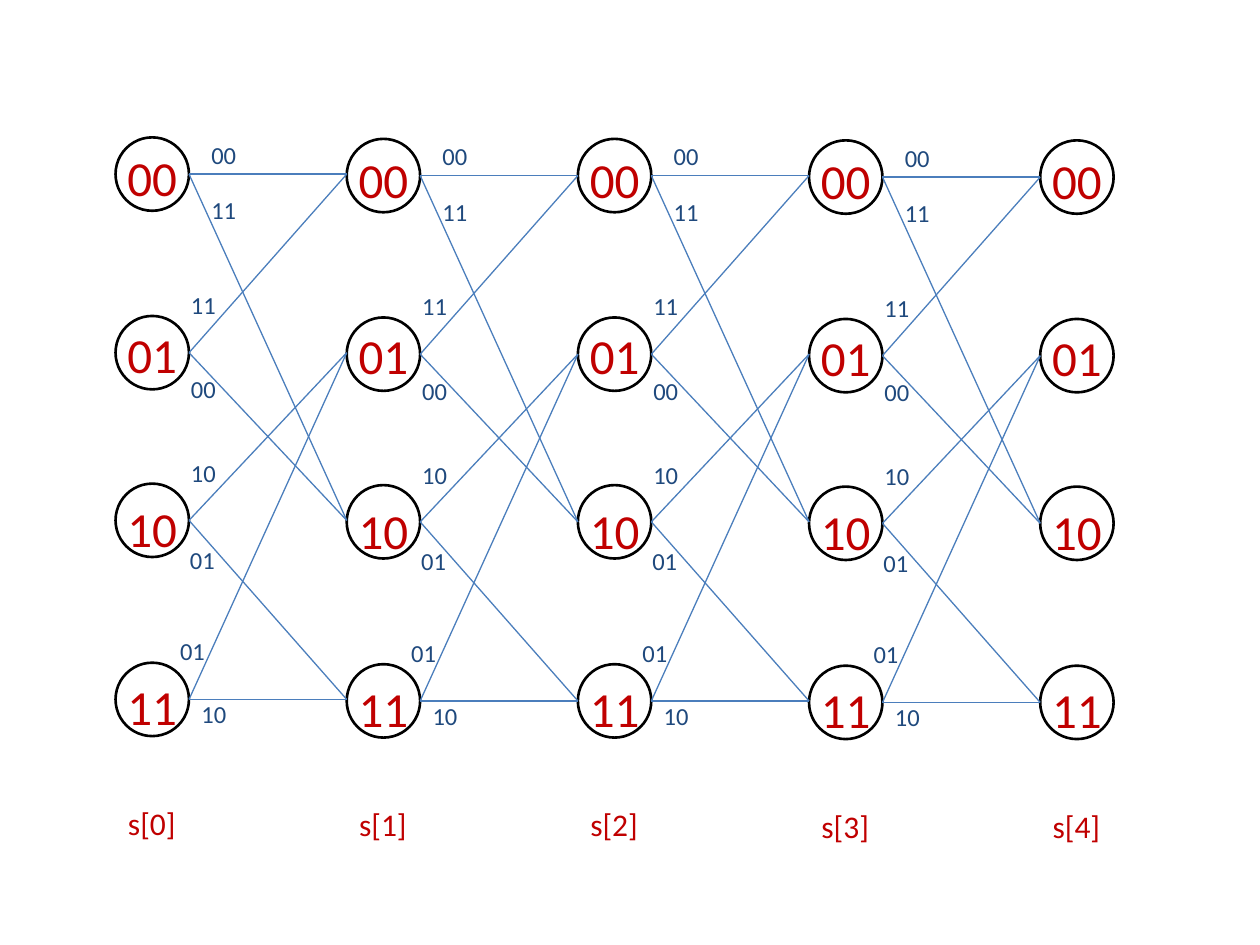
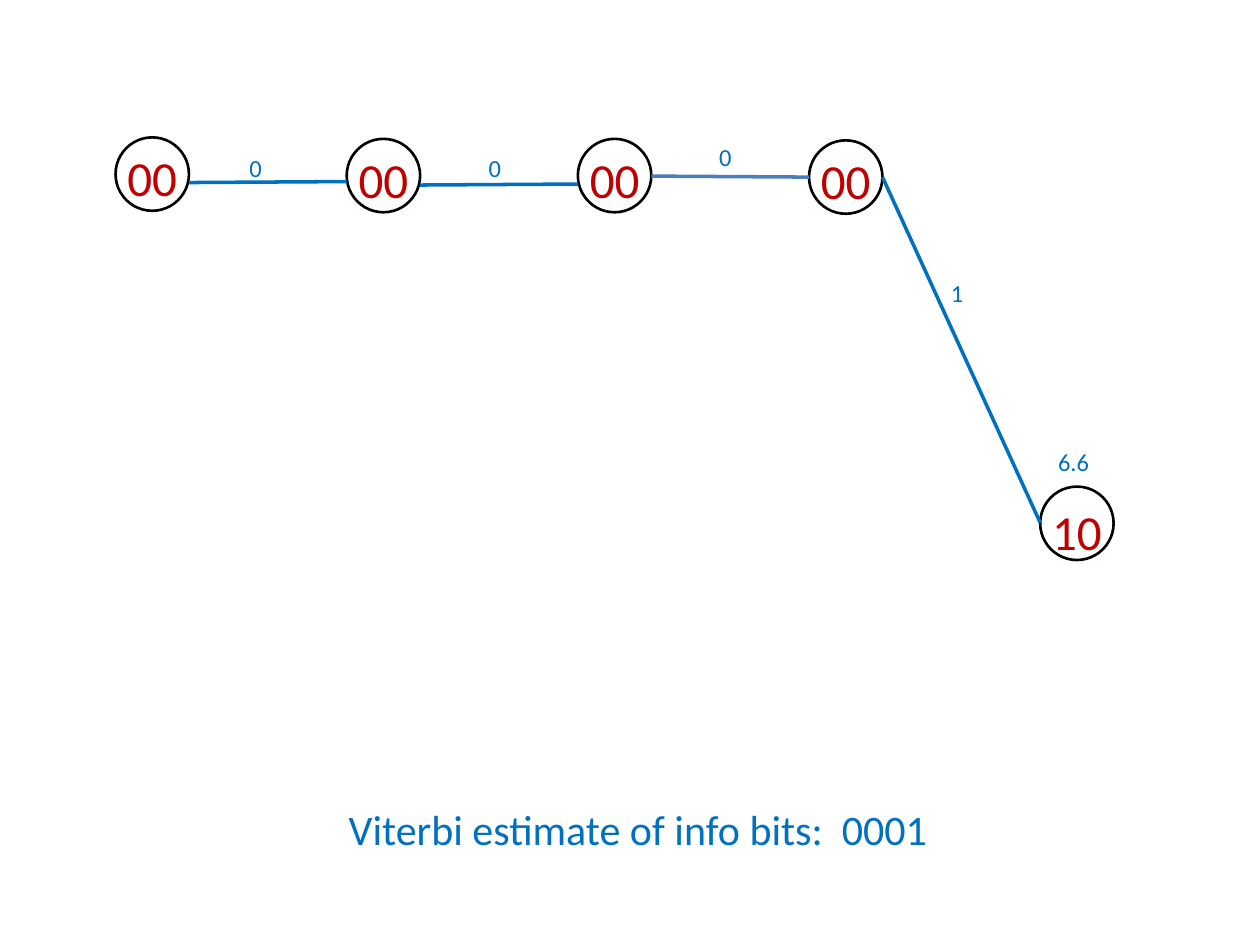
from lxml import etree
from pptx import Presentation
from pptx.dml.color import RGBColor
from pptx.enum.shapes import MSO_CONNECTOR, MSO_SHAPE
from pptx.enum.text import MSO_ANCHOR, MSO_AUTO_SIZE, PP_ALIGN
from pptx.oxml.ns import qn
from pptx.util import Cm, Pt

STRAIGHT = MSO_CONNECTOR.STRAIGHT
OVAL = MSO_SHAPE.OVAL
LEFT, CENTER = PP_ALIGN.LEFT, PP_ALIGN.CENTER
TOP, MIDDLE = MSO_ANCHOR.TOP, MSO_ANCHOR.MIDDLE

FONT = "Calibri"
BLACK, RED, NAVY = "000000", "C00000", "1F497D"
BRANCH_BLUE, PATH_BLUE = "4B7EBC", "0070C0"

# Trellis geometry in cm: one column per time step, one row per state
STATES = ["00", "01", "10", "11"]
STATE_TOPS = [2.77, 6.37, 9.75, 13.36]
STATE_TEXT_INSETS = [0.12, 0.05, 0.32, 0.28]
STEP_LEFTS = [2.33 + 4.66 * step for step in range(5)]
STEP_DROPS = [0, 0.03, 0.03, 0.06, 0.06]
DIAMETER = 1.48
RADIUS = DIAMETER / 2


def color(hex_string):
    return RGBColor.from_string(hex_string)


def write(shape, text, size=14, hue=NAVY, align=LEFT, anchor=TOP):
    frame = shape.text_frame
    frame.word_wrap = False
    frame.vertical_anchor = anchor
    paragraph = frame.paragraphs[0]
    paragraph.alignment = align
    run = paragraph.add_run()
    run.text = text
    run.font.name = FONT
    run.font.size = Pt(size)
    run.font.color.rgb = color(hue)


# Trellis section: from state, to state, code bits, label offset and label top
BRANCHES = [
    (0, 0, "00", 1.68, 2.69),
    (0, 2, "11", 1.68, 3.81),
    (1, 0, "11", 1.27, 5.72),
    (1, 2, "00", 1.27, 7.42),
    (2, 1, "10", 1.27, 9.11),
    (2, 3, "01", 1.25, 10.86),
    (3, 3, "10", 1.48, 13.97),
    (3, 1, "01", 1.05, 12.7),
]

# Nodes are (step, state); lines are (step, start y, end y, colour, width);
# labels are (text, left, top, width, height, size, colour)
trellis_nodes = [(step, state) for step in range(5) for state in range(4)]
trellis_lines, trellis_labels = [], []
for step, (left, drop) in enumerate(zip(STEP_LEFTS, STEP_DROPS)):
    trellis_labels.append((f"s[{step}]", left, 16.08 + drop, 1.48, 1.02, 18, RED))
    if step == len(STEP_LEFTS) - 1:
        continue
    for start, end, bits, offset, top in BRANCHES:
        start_y, end_y = (STATE_TOPS[state] + drop + RADIUS for state in (start, end))
        trellis_lines.append((step, start_y, end_y, BRANCH_BLUE, 0.75))
        trellis_labels.append((bits, left + offset, top + drop, 1.02, 0.86, 14, NAVY))

survivor_nodes = [(0, 0), (1, 0), (2, 0), (3, 0), (4, 2)]
survivor_lines = [
    (0, 3.68, 3.66, PATH_BLUE, 2),
    (1, 3.73, 3.71, PATH_BLUE, 2),
    (2, 3.55, 3.57, BRANCH_BLUE, 2),
    (3, 3.57, 10.54, PATH_BLUE, 2),
]
survivor_labels = [
    ("Viterbi estimate of info bits:  0001", 6.78, 16.08, 12.27, 1.28, 24, PATH_BLUE),
    ("6.6", 21.08, 8.89, 1.14, 0.86, 14, PATH_BLUE),
]
for bit, left, top in [("0", 4.78, 2.97), ("0", 9.6, 2.97),
                       ("0", 14.25, 2.74), ("1", 18.92, 5.49)]:
    survivor_labels.append((bit, left, top, 0.76, 0.86, 14, PATH_BLUE))

prs = Presentation()
prs.slide_width, prs.slide_height = Cm(25.4), Cm(19.05)

for nodes, lines, labels in [
    (trellis_nodes, trellis_lines, trellis_labels),
    (survivor_nodes, survivor_lines, survivor_labels),
]:
    shapes = prs.slides.add_slide(prs.slide_layouts[6]).shapes

    for step, state in nodes:
        node = shapes.add_shape(OVAL, Cm(STEP_LEFTS[step]),
                                Cm(STATE_TOPS[state] + STEP_DROPS[step]),
                                Cm(DIAMETER), Cm(DIAMETER))
        node.shadow.inherit = False
        node.fill.background()
        node.line.color.rgb = color(BLACK)
        node.line.width = Pt(1.5)
        frame = node.text_frame
        frame.margin_left = frame.margin_right = frame.margin_bottom = 0
        frame.margin_top = Cm(STATE_TEXT_INSETS[state])
        write(node, STATES[state], size=28, hue=RED, align=CENTER, anchor=MIDDLE)

    for step, start_y, end_y, hue, width in lines:
        branch = shapes.add_connector(STRAIGHT,
                                      Cm(STEP_LEFTS[step] + DIAMETER), Cm(start_y),
                                      Cm(STEP_LEFTS[step + 1]), Cm(end_y))
        branch.line.color.rgb = color(hue)
        branch.line.width = Pt(width)
        etree.SubElement(branch._element.spPr, qn("a:effectLst"))

    for text, left, top, width, height, size, hue in labels:
        label = shapes.add_textbox(Cm(left), Cm(top), Cm(width), Cm(height))
        label.text_frame.auto_size = MSO_AUTO_SIZE.SHAPE_TO_FIT_TEXT
        write(label, text, size=size, hue=hue)

prs.save("out.pptx")
